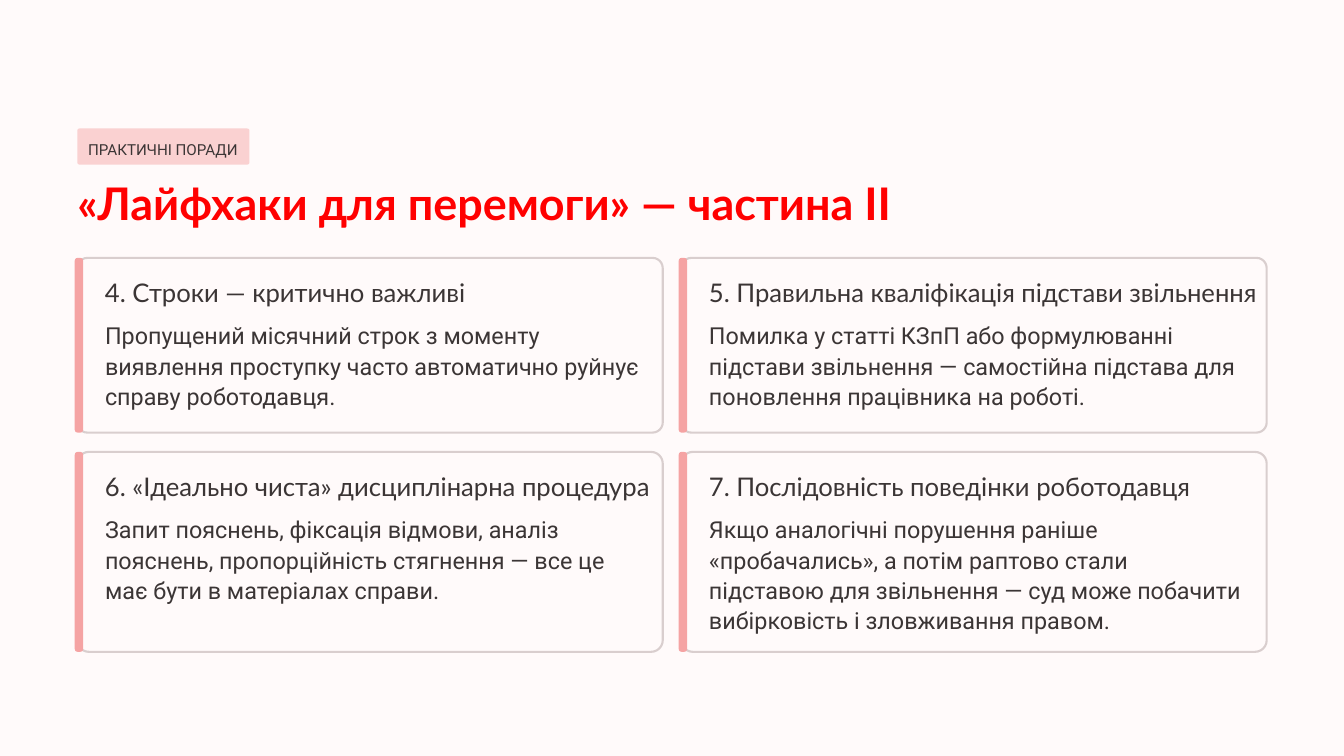
from pptx import Presentation
from pptx import util as u
from pptx.dml.color import RGBColor
from pptx.enum import shapes, text

# Content
TAG = "ПРАКТИЧНІ ПОРАДИ"
HEADLINE = "«Лайфхаки для перемоги» — частина ІІ"
TIPS = [
    ("4. Строки — критично важливі",
     "Пропущений місячний строк з моменту виявлення проступку часто автоматично "
     "руйнує справу роботодавця."),
    ("5. Правильна кваліфікація підстави звільнення",
     "Помилка у статті КЗпП або формулюванні підстави звільнення — самостійна "
     "підстава для поновлення працівника на роботі."),
    ("6. «Ідеально чиста» дисциплінарна процедура",
     "Запит пояснень, фіксація відмови, аналіз пояснень, пропорційність стягнення "
     "— все це має бути в матеріалах справи."),
    ("7. Послідовність поведінки роботодавця",
     "Якщо аналогічні порушення раніше «пробачались», а потім раптово стали "
     "підставою для звільнення — суд може побачити вибірковість і зловживання правом."),
]

# Colours and text formats
PAPER = RGBColor(0xFF, 0xFA, 0xFA)
INK = RGBColor(0x3B, 0x35, 0x35)
RED = RGBColor(0xFF, 0x00, 0x00)
BLUSH = RGBColor(0xFA, 0xD1, 0xD1)
ROSE = RGBColor(0xF5, 0xA3, 0xA3)
BORDER = RGBColor(0xD9, 0xCE, 0xCE)

# Each format: font attributes, colour, line spacing in points
TAG_STYLE = ({"name": "Roboto", "size": u.Pt(13)}, INK, 21)
HEADLINE_STYLE = ({"name": "Lato", "size": u.Pt(38.5), "bold": True}, RED, 48.5)
TIP_STYLE = ({"name": "Lato", "size": u.Pt(22)}, INK, 24)
ADVICE_STYLE = ({"name": "Roboto", "size": u.Pt(20)}, INK, 26)

# Grid in inches
LEFT, TOP = 0.92, 3.07
COLUMNS = 2
CARD_WIDTH, GAP_X, GAP_Y = 6.97, 0.22, 0.23
ROW_HEIGHTS = [2.08, 2.38]
INDENT, TEXT_WIDTH = 0.33, 6.6


def inches(*lengths):
    return [u.Inches(length) for length in lengths]


def add_panel(slide, box, corner, fill, border=None):
    panel = slide.shapes.add_shape(shapes.MSO_SHAPE.ROUNDED_RECTANGLE, *inches(*box))
    panel.adjustments[0] = corner
    panel.shadow.inherit = False
    panel.fill.solid()
    panel.fill.fore_color.rgb = fill
    if border is None:
        panel.line.fill.background()
    else:
        panel.line.color.rgb = border
        panel.line.width = u.Pt(1.8)


def write(holder, words, style):
    font_values, colour, spacing = style
    frame = holder.text_frame
    frame_values = {"margin_left": 0, "margin_top": 0, "margin_right": 0,
                    "margin_bottom": 0, "word_wrap": True,
                    "auto_size": text.MSO_AUTO_SIZE.NONE,
                    "vertical_anchor": text.MSO_ANCHOR.TOP}
    for key, value in frame_values.items():
        setattr(frame, key, value)
    line = frame.paragraphs[0]
    line.text = words
    line.alignment = text.PP_ALIGN.LEFT
    line.line_spacing = u.Pt(spacing)
    for key, value in font_values.items():
        setattr(line.font, key, value)
    line.font.color.rgb = colour


def add_words(slide, box, words, style):
    write(slide.shapes.add_textbox(*inches(*box)), words, style)


def add_card(slide, x, y, height, tip, advice):
    add_panel(slide, (x, y, CARD_WIDTH, height), 0.058, PAPER, BORDER)
    add_panel(slide, (x - 0.03, y, 0.1, height), 0.344, ROSE)
    add_words(slide, (x + INDENT, y + 0.26, TEXT_WIDTH, 0.34), tip, TIP_STYLE)
    add_words(slide, (x + INDENT, y + 0.73, 6.39, 1.1), advice, ADVICE_STYLE)


def main():
    deck = Presentation()
    deck.slide_width, deck.slide_height = inches(16, 9)
    slide = deck.slides.add_slide(deck.slide_layouts[5])
    slide.background.fill.solid()
    slide.background.fill.fore_color.rgb = PAPER

    # Tag and headline
    add_panel(slide, (LEFT, 1.53, 2.05, 0.43), 0.064, BLUSH)
    add_words(slide, (LEFT + 0.13, 1.6, 1.9, 0.29), TAG, TAG_STYLE)
    headline = slide.shapes.title
    headline.left, headline.top, headline.width, headline.height = inches(
        LEFT, 2.06, 10.18, 0.67)
    write(headline, HEADLINE, HEADLINE_STYLE)

    # Tip cards, row by row
    for index, (tip, advice) in enumerate(TIPS):
        row, column = divmod(index, COLUMNS)
        x = LEFT + column * (CARD_WIDTH + GAP_X)
        y = TOP + sum(ROW_HEIGHTS[:row]) + row * GAP_Y
        add_card(slide, x, y, ROW_HEIGHTS[row], tip, advice)

    deck.save("out.pptx")


if __name__ == "__main__":
    main()
